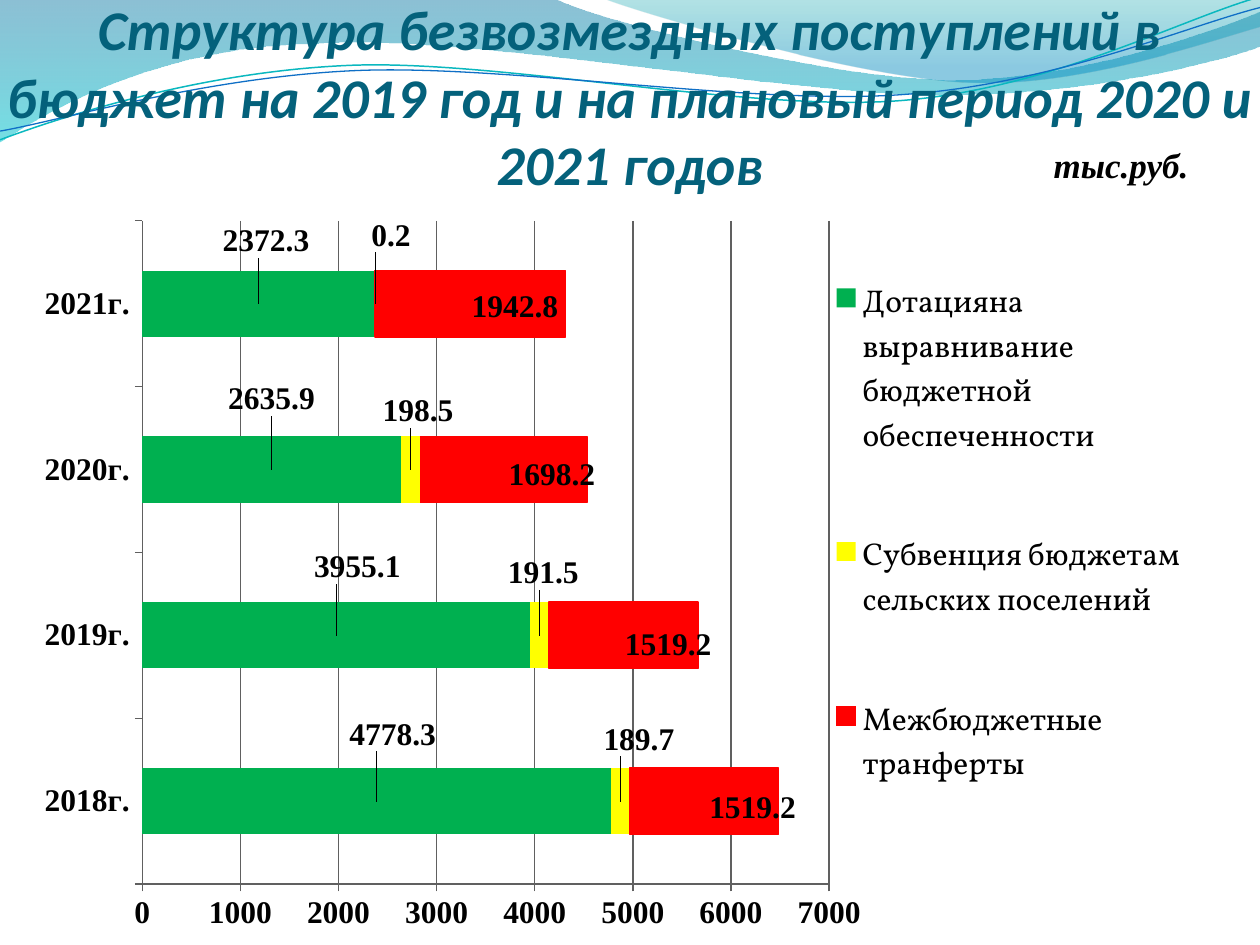
from lxml import etree
from pptx import Presentation, util as u
from pptx.chart.data import CategoryChartData
from pptx.dml.color import RGBColor
from pptx.enum import chart as ch, text
from pptx.oxml import parse_xml
from pptx.oxml.ns import nsdecls, qn

Pt = u.Pt
SERIF = "Times New Roman"
UNITS = 100  # outline units per point

TITLE = ("Структура безвозмездных поступлений в бюджет на 2019 год "
         "и на плановый период 2020 и 2021 годов")
UNIT = "тыс.руб."
YEARS = ["2018г.", "2019г.", "2020г.", "2021г."]
# name, colour, values, label shifts in percent of the chart
SERIES = [
    ("Дотацияна выравнивание бюджетной обеспеченности", "00B050",
     [4778.3, 3955.1, 2635.9, 2372.3],
     [(1.3, -9), (1.7, -9.2), (0, -9.5), (.6, -8.5)]),
    ("Субвенция бюджетам сельских поселений ", "FFFF00",
     [189.7, 191.5, 198.5, 0.2],
     [(1.5, -8.3), (.3, -8.4), (.6, -7.9), (1.3, -9.2)]),
    ("Межбюджетные транферты", "FF0000",
     [1519.2, 1519.2, 1698.2, 1942.8],
     [(3.9, 1), (3.6, 1.3), (3.9, .7), (3.6, .5)]),
]
PLOT_BOX = (9.85, 1.95, 55.4, 89.8)
LEGEND_BOX = (64.2, .1, 31, 89)

# Waves in points: a pair is a line end, six numbers are a Bezier curve
WAVES = [
    {"start": (0, -1), "closed": True,
     "stops": [(0, "0074A1", 45), (100, "00C6CF", 55)],
     "steps": [(316.8, -1), (342.7, 12.2, 478, 45.4, 545.8, 45.4),
               (614.2, 45.4, 689.8, 18.7, 720, 6.5), (720.7, 25.9),
               (707.8, 31.7, 626.4, 54.7, 537.1, 54),
               (447.8, 54, 275, 20.2, 185, 24.5),
               (92.9, 25.9, 33.1, 59.8, -.7, 81.4)]},
    {"start": (344.9, -.7), "closed": True,
     "stops": [(0, "00A1A9", 30), (80, "008BBF", 45)],
     "steps": [(366.5, 7.9, 491, 44.6, 553.7, 46.8),
               (616.3, 49.7, 691.9, 23, 720, 15.1), (720, 0)]},
    {"start": (0, 79.9), "line": ("0AB8BF", .85),
     "steps": [(34.6, 67, 113.8, 41, 199.4, 37.4),
               (284.4, 33.8, 427, 64.1, 513.4, 57.6),
               (599.8, 51.1, 675.4, 10.8, 718.6, -1.4)]},
    {"start": (0, 74.9), "line": ("0F6FC6", .75),
     "steps": [(33.8, 69.1, 118.1, 43.9, 203.8, 40.3),
               (290.2, 36.7, 429.8, 60.5, 516.2, 54),
               (601.9, 48.2, 677.5, 15.1, 720, 4.3)]},
]


def rgb(code):
    return RGBColor.from_string(code)


def set_font(font, name, size, color="000000", bold=False, italic=False):
    font.name, font.size = name, Pt(size)
    font.bold, font.italic = bold, italic
    font.color.rgb = rgb(color)


def add_wave(slide, start, steps, closed=False, stops=None, line=None):
    ends = [start] + [step[-2:] for step in steps]
    points = [(round(x * UNITS), round(y * UNITS)) for x, y in ends]
    left, top = (min(axis) for axis in zip(*points))
    fb = slide.shapes.build_freeform(*points[0], scale=Pt(1) / UNITS)
    fb.add_line_segments(points[1:], close=closed)
    s = fb.convert_to_shape()
    # Bend the straight segments that are curves
    for seg, step in zip(list(s._element.iter(qn("a:lnTo"))), steps):
        if len(step) == 6:
            pts = "".join(f'<a:pt x="{round(x * UNITS) - left}" y="{round(y * UNITS) - top}"/>'
                          for x, y in zip(step[::2], step[1::2]))
            curve = parse_xml(f'<a:cubicBezTo {nsdecls("a")}>{pts}</a:cubicBezTo>')
            seg.getparent().replace(seg, curve)
    s.shadow.inherit = False
    s.fill.background()
    if line:
        s.line.color.rgb, s.line.width = rgb(line[0]), Pt(line[1])
    else:
        s.line.fill.background()
    if stops:
        gs = "".join(
            f'<a:gs pos="{pos * 1000}"><a:srgbClr val="{c}">'
            f'<a:alpha val="{alpha * 1000}"/></a:srgbClr></a:gs>'
            for pos, c, alpha in stops)
        grad = parse_xml(f'<a:gradFill {nsdecls("a")}><a:gsLst>{gs}</a:gsLst>'
                         '<a:lin ang="5400000" scaled="0"/></a:gradFill>')
        old = s._element.spPr.find(qn("a:noFill"))
        old.getparent().replace(old, grad)


def add_text(slide, box, words, align, anchor, insets, **font):
    tb = slide.shapes.add_textbox(*map(Pt, box))
    tf = tb.text_frame
    tf.word_wrap, tf.vertical_anchor = True, anchor
    tf.margin_left, tf.margin_top, tf.margin_right, tf.margin_bottom = map(Pt, insets)
    p = tf.paragraphs[0]
    p.text, p.alignment = words, align
    set_font(p.font, bold=True, italic=True, **font)


def place(parent, index, box, inner=False, edge=True):
    """Give a chart part a manual layout, in percent of the chart."""
    for old in parent.findall(qn("c:layout")):
        parent.remove(old)
    root = etree.Element(qn("c:layout"))
    manual = etree.SubElement(root, qn("c:manualLayout"))
    parts = [("layoutTarget", "inner")] if inner else []
    if edge:
        parts += [("xMode", "edge"), ("yMode", "edge")]
    parts += [(tag, round(v / 100, 4)) for tag, v in zip("xywh", box)]
    for tag, val in parts:
        etree.SubElement(manual, qn("c:" + tag)).set("val", str(val))
    parent.insert(index, root)


def hide_leader_lines(labels):
    for old in labels.findall(qn("c:showLeaderLines")):
        labels.remove(old)
    labels.append(parse_xml(
        f'<c:extLst {nsdecls("c")}><c:ext uri="{{CE6537A1-D6FC-4f65-9D91-7224C49458BB}}" '
        'xmlns:c15="http://schemas.microsoft.com/office/drawing/2012/chart">'
        '<c15:showLeaderLines val="0"/></c:ext></c:extLst>'))


def add_budget_chart(slide):
    data = CategoryChartData()
    data.categories = YEARS
    for name, _, values, _ in SERIES:
        data.add_series(name, values)
    chart = slide.shapes.add_chart(
        ch.XL_CHART_TYPE.BAR_STACKED, Pt(11.5), Pt(118), Pt(708.5), Pt(422), data).chart
    chart.has_title = False
    set_font(chart.font, "Vollkorn", 18)
    plot = chart.plots[0]
    plot.gap_width, plot.overlap, plot.vary_by_categories = 150, 100, False
    place(chart._chartSpace.chart.plotArea, 0, PLOT_BOX, inner=True)

    # Axes
    for axis in (chart.category_axis, chart.value_axis):
        set_font(axis.tick_labels.font, SERIF, 18, bold=True)
        axis.format.line.color.rgb = rgb("606060")
        axis.major_tick_mark = ch.XL_TICK_MARK.OUTSIDE
    axis.has_major_gridlines = True
    axis.major_gridlines.format.line.color.rgb = rgb("606060")
    axis.minimum_scale, axis.maximum_scale, axis.major_unit = 0, 7000, 1000

    # Legend
    chart.has_legend = True
    chart.legend.position = ch.XL_LEGEND_POSITION.RIGHT
    chart.legend.include_in_layout = False
    place(chart.legend._element, 1, LEGEND_BOX)

    # Bars and their shifted labels
    for s, (_, color, _, shifts) in zip(plot.series, SERIES):
        s.format.fill.solid()
        s.format.fill.fore_color.rgb = rgb(color)
        if color == "FF0000":
            s.format.line.color.rgb, s.format.line.width = rgb(color), Pt(.75)
        labels = s.data_labels
        labels.show_value = True
        set_font(labels.font, SERIF, 18, bold=True)
        for i in range(len(shifts)):
            set_font(s.points[i].data_label.font, SERIF, 18, bold=True)
        for d, shift in zip(labels._element.findall(qn("c:dLbl")), shifts):
            place(d, 1, shift, edge=False)
        hide_leader_lines(labels._element)


def main():
    prs = Presentation()
    prs.slide_width, prs.slide_height = Pt(720), Pt(540)
    slide = prs.slides.add_slide(prs.slide_layouts[6])
    for wave in WAVES:
        add_wave(slide, **wave)
    add_text(slide, (0, 0, 720, 112.3), TITLE, text.PP_ALIGN.CENTER,
             text.MSO_ANCHOR.BOTTOM, (0, 3.6, 0, 0),
             name="Calibri", size=32, color="04617B")
    add_budget_chart(slide)
    add_text(slide, (517.7, 78.5, 168.5, 31.7), UNIT, text.PP_ALIGN.RIGHT,
             text.MSO_ANCHOR.TOP, (7.2, 3.6, 7.2, 3.6), name=SERIF, size=20)
    prs.save("out.pptx")


if __name__ == "__main__":
    main()
